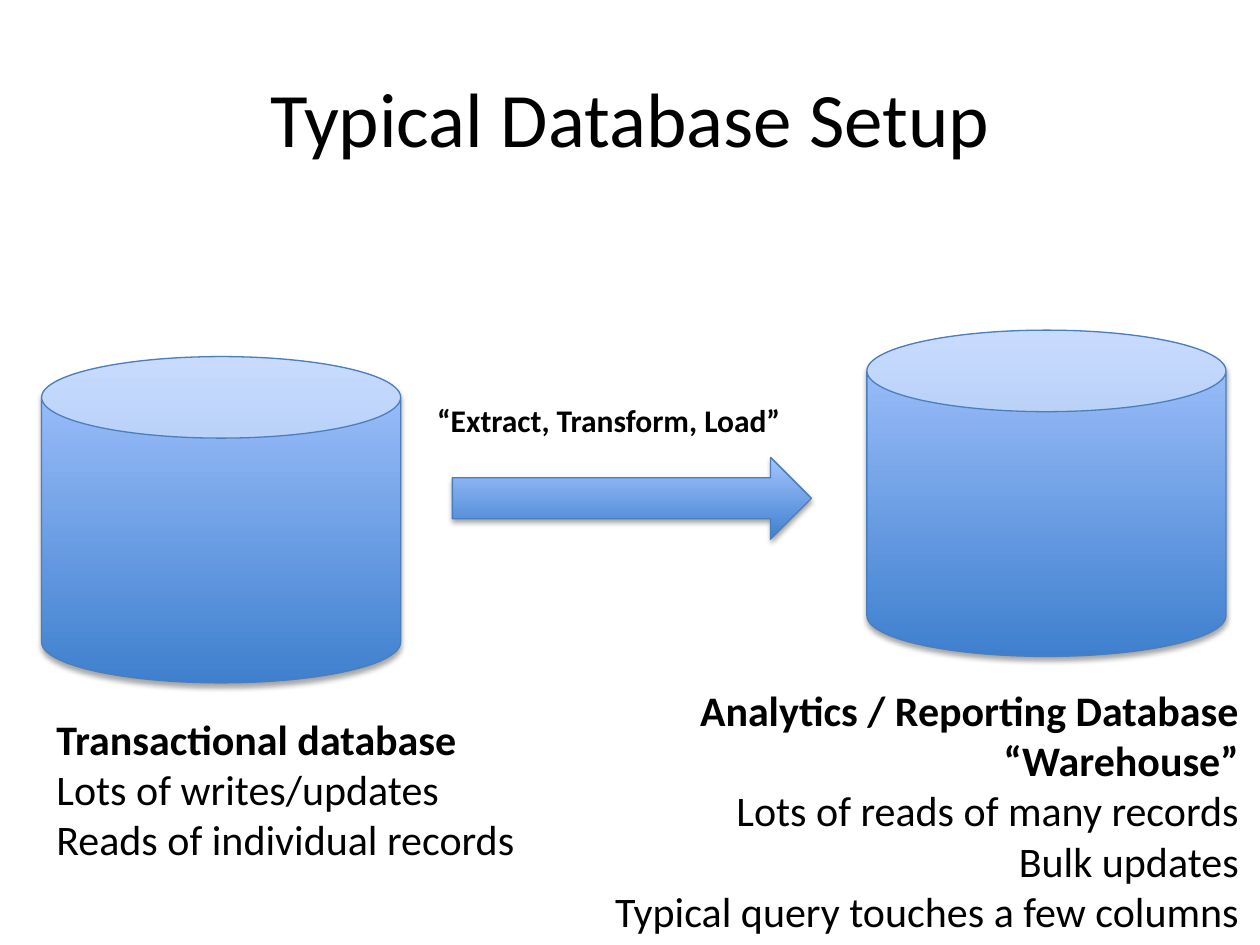
"""Build the slide on a typical database setup."""
from pptx import Presentation
from pptx.dml.color import RGBColor
from pptx.enum.shapes import MSO_SHAPE as Kind
from pptx.enum.text import MSO_ANCHOR as Anchor, MSO_AUTO_SIZE as Fit, PP_ALIGN as Align
from pptx.oxml import parse_xml
from pptx.oxml.ns import nsdecls, qn
from pptx.util import Inches, Pt

SHADE = (
    f'<a:outerShdw {nsdecls("a")} blurRad="40000" dist="23000" dir="5400000" rotWithShape="0">'
    '<a:srgbClr val="000000"><a:alpha val="35000"/></a:srgbClr></a:outerShdw>'
)


def tint(code):
    """Turn a hex string into a colour."""
    return RGBColor.from_string(code)


def write(para, text, size, bold, align):
    """Put one formatted run into a paragraph."""
    para.alignment = align
    run = para.add_run()
    run.text = text
    look = {"name": "Calibri", "size": Pt(size), "bold": bold}
    for key, value in look.items():
        setattr(run.font, key, value)
    run.font.color.rgb = tint("000000")


deck = Presentation()
deck.slide_width, deck.slide_height = Inches(10), Inches(7.5)
slide = deck.slides.add_slide(deck.slide_layouts[5])

title = slide.shapes.title
place = {"left": 0.5, "top": 0.3, "width": 9, "height": 1.25}
for key, value in place.items():
    setattr(title, key, Inches(value))
title.text_frame.vertical_anchor = Anchor.MIDDLE
write(title.text_frame.paragraphs[0], "Typical Database Setup", 44, False, Align.CENTER)

figures = [
    (Kind.CAN, 0.33, 2.83, 2.59),
    (Kind.CAN, 6.88, 2.62, 2.59),
    (Kind.RIGHT_ARROW, 3.59, 3.63, 0.65),
]
for kind, left, top, height in figures:
    shape = slide.shapes.add_shape(kind, Inches(left), Inches(top), Inches(2.85), Inches(height))
    shape.fill.gradient()
    shape.fill.gradient_angle = 90
    for stop, spot, code in zip(shape.fill.gradient_stops, (0, 1), ("3F80CE", "A4C4FF")):
        stop.position = spot
        stop.color.rgb = tint(code)
    shape.line.color.rgb = tint("4B7EBC")
    shape.line.width = Pt(0.75)
    shape.shadow.inherit = False
    shape.element.spPr.find(qn("a:effectLst")).append(parse_xml(SHADE))

labels = [
    ((0.35, 5.61, 4.76, 1.31), 24, Align.LEFT,
     ["Transactional database"],
     ["Lots of writes/updates", "Reads of individual records"]),
    ((4.72, 5.38, 5.21, 2.12), 24, Align.RIGHT,
     ["Analytics / Reporting Database", "“Warehouse”"],
     ["Lots of reads of many records", "Bulk updates", "Typical query touches a few columns"]),
    ((3.37, 3.13, 3.35, 0.4), 18, Align.LEFT, ["“Extract, Transform, Load”"], []),
]
for box, size, align, heads, notes in labels:
    frame = slide.shapes.add_textbox(*map(Inches, box)).text_frame
    frame.word_wrap = True
    frame.auto_size = Fit.SHAPE_TO_FIT_TEXT
    for i, text in enumerate(heads + notes):
        para = frame.add_paragraph() if i else frame.paragraphs[0]
        write(para, text, size, i < len(heads), align)

deck.save("out.pptx")
